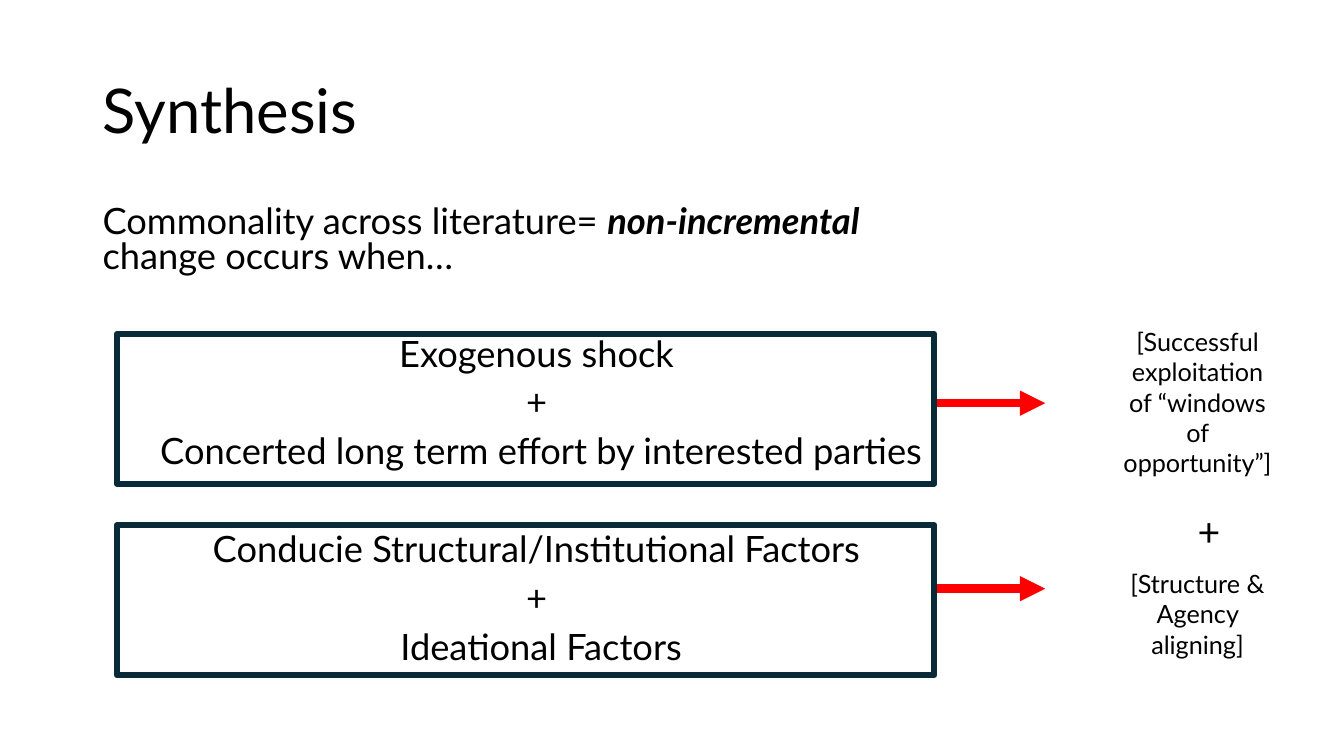
from dataclasses import dataclass

from lxml import etree
from pptx import Presentation
from pptx.dml.color import RGBColor
from pptx.enum.shapes import MSO_CONNECTOR, MSO_SHAPE
from pptx.enum.text import MSO_ANCHOR, PP_ALIGN
from pptx.oxml.ns import qn
from pptx.util import Pt

LEFT, CENTER = PP_ALIGN.LEFT, PP_ALIGN.CENTER
MIDDLE = MSO_ANCHOR.MIDDLE
RECTANGLE = MSO_SHAPE.RECTANGLE
STRAIGHT = MSO_CONNECTOR.STRAIGHT


@dataclass(frozen=True)
class Theme:
    font: str = "Lato"
    ink: RGBColor = RGBColor(0x00, 0x00, 0x00)
    frame: RGBColor = RGBColor(0x09, 0x2A, 0x39)
    arrow: RGBColor = RGBColor(0xFF, 0x00, 0x00)
    title: float = 44
    body: float = 25.9
    note: float = 18
    plus: float = 28


THEME = Theme()

INTRO = [("Commonality across literature= ", False),
         ("non-incremental ", True),
         ("change occurs when…", False)]
FACTOR_GROUPS = [
    ["Exogenous shock ", "+ ", "Concerted long term effort by interested parties"],
    ["Conducie Structural/Institutional Factors ", "+ ", "Ideational Factors"],
]
LINE_GAP = 10
GROUP_GAP = 45


def format_run(r, size, emphasis=False):
    font = r.font
    font.name, font.size, font.color.rgb = THEME.font, Pt(size), THEME.ink
    font.bold = font.italic = emphasis


def add_textbox(slide, left, top, width, height):
    sp = slide.shapes.add_textbox(Pt(left), Pt(top), Pt(width), Pt(height))
    sp.text_frame.word_wrap = True
    return sp.text_frame


def place_title(slide, left, top, width, height, text):
    sp = slide.shapes.title
    sp.left, sp.top, sp.width, sp.height = Pt(left), Pt(top), Pt(width), Pt(height)
    tf = sp.text_frame
    tf.text = text
    tf.vertical_anchor = MIDDLE
    p = tf.paragraphs[0]
    p.alignment, p.line_spacing = LEFT, 0.9
    format_run(p.runs[0], THEME.title)


def add_body(slide, left, top, width, height):
    """Intro sentence, then the factor groups set apart by a wider gap."""
    tf = add_textbox(slide, left, top, width, height)
    p = tf.paragraphs[0]
    p.alignment, p.line_spacing = LEFT, 0.8
    for text, emphasis in INTRO:
        r = p.add_run()
        r.text = text
        format_run(r, THEME.body, emphasis)
    for group in FACTOR_GROUPS:
        for i, text in enumerate(group):
            p = tf.add_paragraph()
            p.text = text
            p.alignment, p.line_spacing = CENTER, 0.8
            p.space_before = Pt(LINE_GAP if i else GROUP_GAP)
            format_run(p.runs[0], THEME.body)


def add_centered_text(slide, left, top, width, height, text, size):
    p = add_textbox(slide, left, top, width, height).paragraphs[0]
    p.text = text
    p.alignment = CENTER
    format_run(p.runs[0], size)


def add_arrow(slide, left, y, length):
    line = slide.shapes.add_connector(STRAIGHT, Pt(left), Pt(y), Pt(left + length), Pt(y))
    line.line.color.rgb = THEME.arrow
    line.line.width = Pt(6)
    ln = line.line._get_or_add_ln()
    etree.SubElement(ln, qn("a:tailEnd"), type="triangle")
    etree.SubElement(line._element.spPr, qn("a:effectLst"))


def add_frame(slide, left, top, width, height):
    sp = slide.shapes.add_shape(RECTANGLE, Pt(left), Pt(top), Pt(width), Pt(height))
    sp.shadow.inherit = False
    sp.fill.background()
    sp.line.color.rgb = THEME.frame
    sp.line.width = Pt(4.25)


def add_factor_row(slide, left, top, width, height, arrow_drop):
    """Frame with an arrow leaving its right edge."""
    add_arrow(slide, left + width, top + arrow_drop, 79.2)
    add_frame(slide, left, top, width, height)


def add_outcomes(slide, left, top, width):
    """Column of two outcome notes joined by a plus sign."""
    add_centered_text(slide, left, top, width, 116.6,
                      "[Successful exploitation of “windows of opportunity”]", THEME.note)
    add_centered_text(slide, left, top + 172.8, width, 72.7,
                      "[Structure & Agency aligning]", THEME.note)
    add_centered_text(slide, left + 46, top + 129, 45.4, 41, "+", THEME.plus)


def build_synthesis(prs):
    slide = prs.slides.add_slide(prs.slide_layouts[5])
    place_title(slide, 66.2, 28.8, 828, 104.4, "Synthesis")
    add_body(slide, 66.2, 144, 640.8, 342.7)
    for top, arrow_drop in ((238.3, 49.7), (375.1, 45.4)):
        add_factor_row(slide, 83.5, top, 583.9, 107.3, arrow_drop)
    add_outcomes(slide, 794.9, 229.7, 121)


def main():
    prs = Presentation()
    prs.slide_width, prs.slide_height = Pt(960), Pt(540)
    build_synthesis(prs)
    prs.save("out.pptx")


if __name__ == "__main__":
    main()
